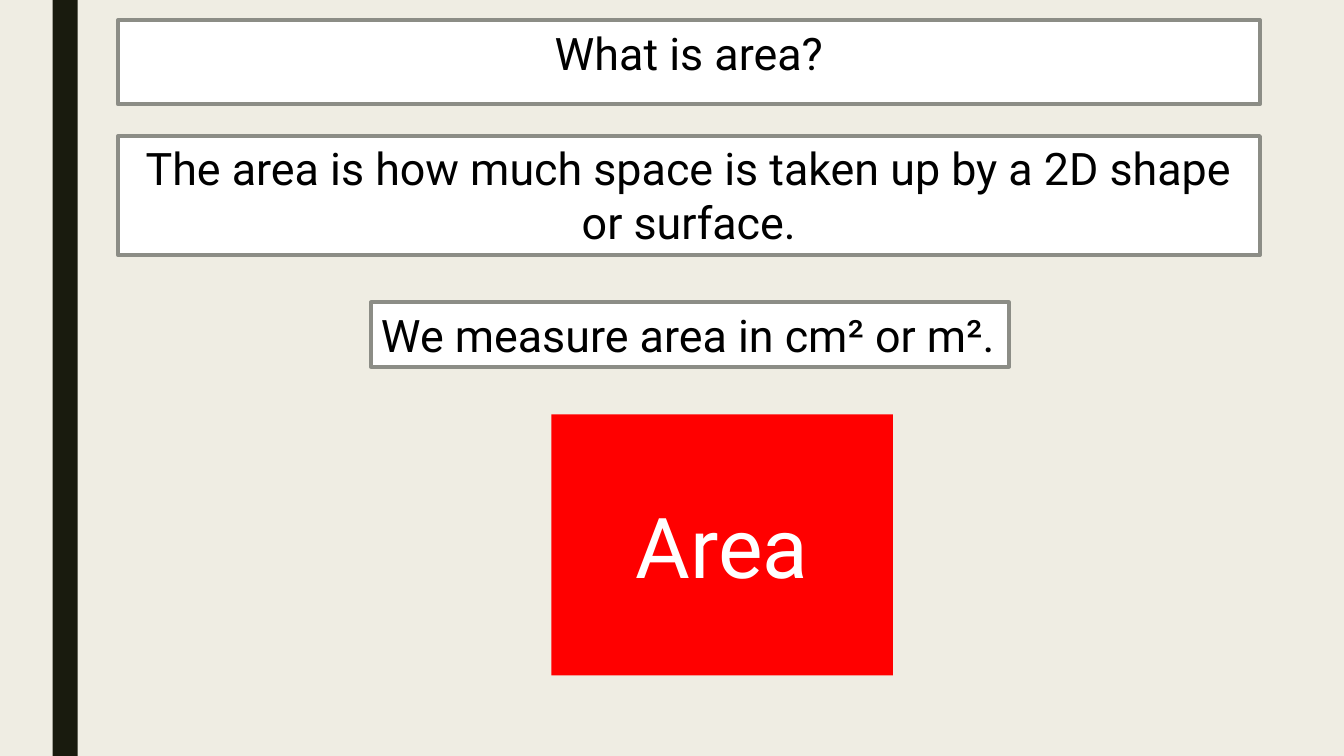
from pptx import Presentation
from pptx.dml.color import RGBColor
from pptx.enum.shapes import MSO_SHAPE
from pptx.enum.text import MSO_ANCHOR, MSO_AUTO_SIZE, PP_ALIGN
from pptx.util import Pt

RECTANGLE = MSO_SHAPE.RECTANGLE
TOP, MIDDLE = MSO_ANCHOR.TOP, MSO_ANCHOR.MIDDLE
LEFT, CENTER = PP_ALIGN.LEFT, PP_ALIGN.CENTER
GROW, FIXED = MSO_AUTO_SIZE.SHAPE_TO_FIT_TEXT, MSO_AUTO_SIZE.NONE

TITLE_ONLY = 5
FONT = "Roboto"
BACKGROUND, BAR, BORDER = "EFEDE3", "191B0E", "8C8D86"
WHITE, BLACK, RED = "FFFFFF", "000000", "FF0000"


def color(value):
    return RGBColor.from_string(value)


def paint(shape, fill, border=None):
    shape.fill.solid()
    shape.fill.fore_color.rgb = color(fill)
    if border:
        shape.line.color.rgb = color(border)
        shape.line.width = Pt(2.75)
    else:
        shape.line.fill.background()


def add_rectangle(slide, box):
    shape = slide.shapes.add_shape(RECTANGLE, *map(Pt, box))
    shape.shadow.inherit = False
    return shape


def write(shape, text, size, text_color, alignment=CENTER, anchor=TOP, auto_size=GROW):
    frame = shape.text_frame
    frame_format = {"word_wrap": True, "auto_size": auto_size, "vertical_anchor": anchor}
    for name, value in frame_format.items():
        setattr(frame, name, value)
    paragraph = frame.paragraphs[0]
    paragraph.alignment = alignment
    run = paragraph.add_run()
    run.text = text
    for name, value in {"name": FONT, "size": Pt(size)}.items():
        setattr(run.font, name, value)
    run.font.color.rgb = color(text_color)


def add_title(slide, text, box):
    title = slide.shapes.title
    for name, value in zip(("left", "top", "width", "height"), box):
        setattr(title, name, Pt(value))
    paint(title, WHITE, BORDER)
    write(title, text, 32, BLACK)


def add_statement(slide, text, box, alignment=CENTER):
    statement = add_rectangle(slide, box)
    paint(statement, WHITE, BORDER)
    write(statement, text, 32, BLACK, alignment)


def main():
    presentation = Presentation()
    presentation.slide_width, presentation.slide_height = Pt(960), Pt(540)
    slide = presentation.slides.add_slide(presentation.slide_layouts[TITLE_ONLY])

    # Background and side bar
    slide.background.fill.solid()
    slide.background.fill.fore_color.rgb = color(BACKGROUND)
    paint(add_rectangle(slide, (37.5, 0, 18, 540)), BAR)

    # Question and explanation
    add_title(slide, "What is area?", (84.25, 14.4, 815.75, 46))
    add_statement(slide, "The area is how much space is taken up by a 2D shape or surface.",
                  (84.25, 97.2, 815.75, 85))
    add_statement(slide, "We measure area in cm² or m².", (265, 216, 455.75, 46), LEFT)

    # Example shape
    example = add_rectangle(slide, (393.85, 296, 244, 186.5))
    paint(example, RED)
    write(example, "Area", 60, WHITE, anchor=MIDDLE, auto_size=FIXED)

    presentation.save("out.pptx")


if __name__ == "__main__":
    main()
